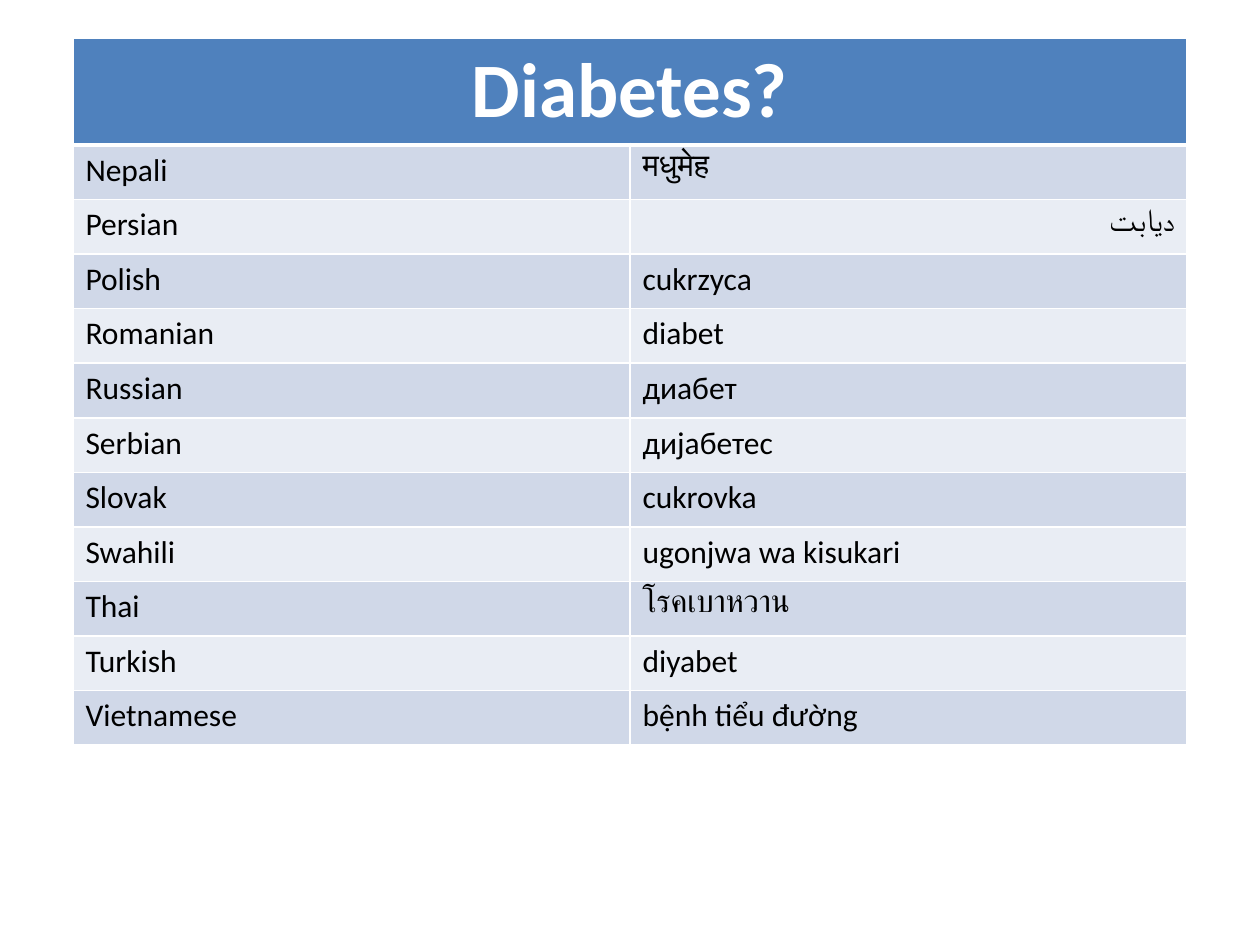
from lxml import etree
from pptx import Presentation, util as u
from pptx.dml import color
from pptx.enum import text
from pptx.oxml import ns

HEADER_FILL = "4F81BD"
BAND_FILLS = ("D0D8E8", "E9EDF4")
WHITE, BLACK = "FFFFFF", "000000"
ROW_HEIGHT = u.Cm(1.1)
HEADER_HEIGHT = u.Cm(2.13)
COLUMN_WIDTH = u.Cm(11.23)

TRANSLATIONS = [
    ("Nepali", "मधुमेह"),
    ("Persian", "دیابت"),
    ("Polish", "cukrzyca"),
    ("Romanian", "diabet"),
    ("Russian", "диабет"),
    ("Serbian", "дијабетес"),
    ("Slovak", "cukrovka"),
    ("Swahili", "ugonjwa wa kisukari"),
    ("Thai", "โรคเบาหวาน"),
    ("Turkish", "diyabet"),
    ("Vietnamese", "bệnh tiểu đường"),
]


def rgb(value):
    return color.RGBColor.from_string(value)


def style_cell(cell, fill, top=1, bottom=1):
    """Give a cell white borders (widths in points) and a solid fill."""
    properties = cell._tc.get_or_add_tcPr()
    for side, width in (("L", 1), ("R", 1), ("T", top), ("B", bottom)):
        line = etree.SubElement(properties, ns.qn("a:ln" + side), w=str(u.Pt(width)))
        solid = etree.SubElement(line, ns.qn("a:solidFill"))
        etree.SubElement(solid, ns.qn("a:srgbClr"), val=WHITE)
    cell.fill.solid()
    cell.fill.fore_color.rgb = rgb(fill)


# Deck and blank page
deck = Presentation()
deck.slide_width, deck.slide_height = u.Cm(25.4), u.Cm(19.05)
page = deck.slides.add_slide(deck.slide_layouts[6])

# Table grid
row_count = len(TRANSLATIONS) + 1
table = page.shapes.add_table(
    row_count, 2, u.Cm(1.47), u.Cm(0.77),
    2 * COLUMN_WIDTH, HEADER_HEIGHT + len(TRANSLATIONS) * ROW_HEIGHT,
).table
for column in table.columns:
    column.width = COLUMN_WIDTH
for row in table.rows:
    row.height = ROW_HEIGHT
table.rows[0].height = HEADER_HEIGHT

# Header across both columns
header = table.cell(0, 0)
header.merge(table.cell(0, 1))
for cell in table.rows[0].cells:
    style_cell(cell, HEADER_FILL, bottom=3)
para = header.text_frame.paragraphs[0]
para.alignment = text.PP_ALIGN.CENTER
span = para.add_run()
span.text = "Diabetes?"
span.font.name = "Calibri"
span.font.size = u.Pt(44)
span.font.bold = True
span.font.color.rgb = rgb(WHITE)

# One banded row per language
for index, words in enumerate(TRANSLATIONS, start=1):
    for column, word in enumerate(words):
        cell = table.cell(index, column)
        style_cell(cell, BAND_FILLS[(index - 1) % 2], top=3 if index == 1 else 1)
        para = cell.text_frame.paragraphs[0]
        if word == "دیابت":
            para.alignment = text.PP_ALIGN.RIGHT
        span = para.add_run()
        span.text = word
        span.font.name = "Calibri"
        span.font.size = u.Pt(18)
        span.font.bold = False
        span.font.color.rgb = rgb(BLACK)

deck.save("out.pptx")
